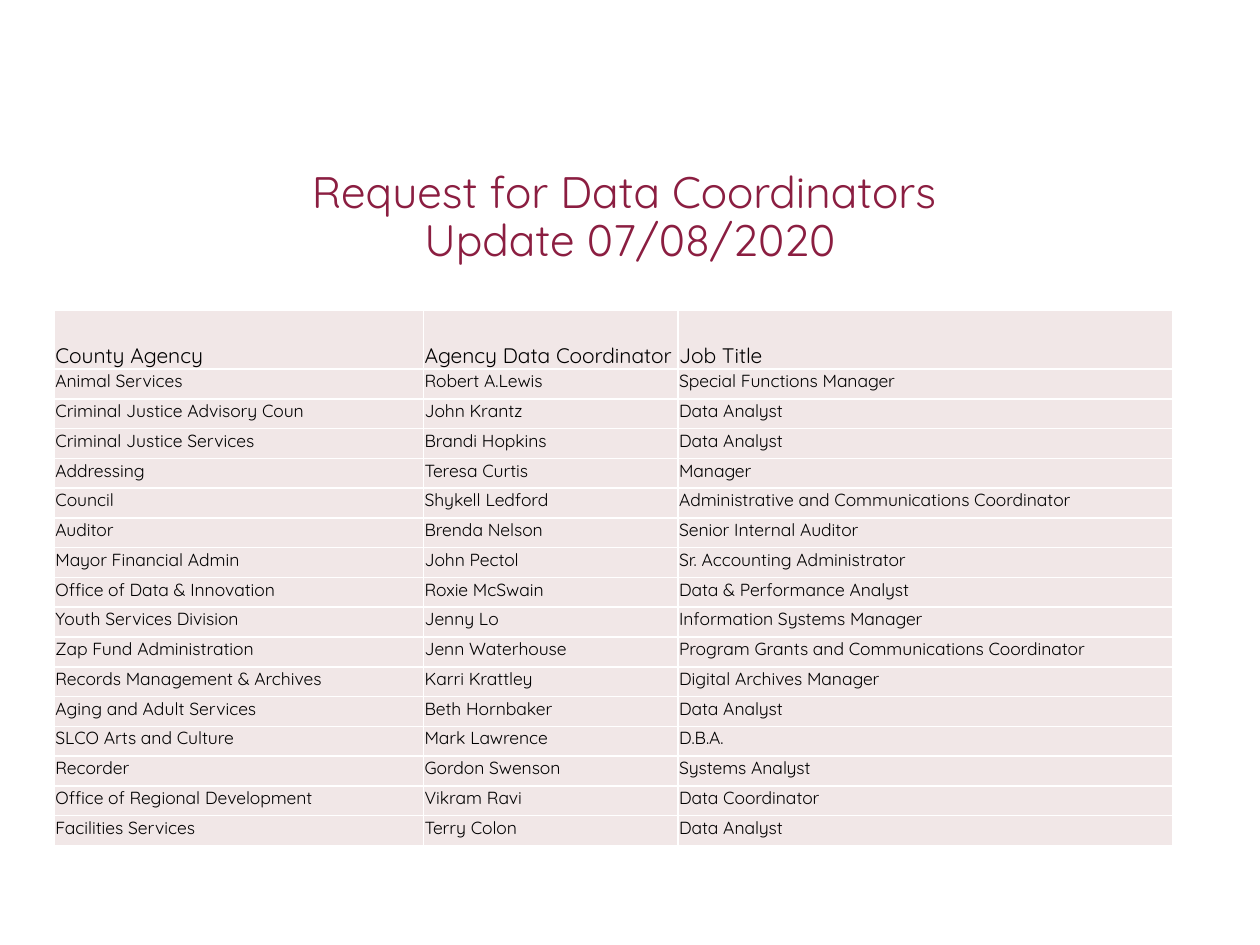
from lxml.etree import SubElement
from pptx import Presentation
from pptx.dml.color import RGBColor
from pptx.enum.text import MSO_ANCHOR, MSO_AUTO_SIZE, PP_ALIGN
from pptx.oxml.ns import qn
from pptx.util import Inches, Pt

FONT = "Quicksand"
MAROON = RGBColor(0x8B, 0x1E, 0x41)
BLACK = RGBColor(0, 0, 0)
WHITE = RGBColor(0xFF, 0xFF, 0xFF)
BLUSH = RGBColor(0xF1, 0xE7, 0xE7)

TITLE_LINES = ["Request for Data Coordinators ", "Update 07/08/2020"]
HEADER = ("County Agency", "Agency Data Coordinator", "Job Title")
COORDINATORS = [
    ("Animal Services", "Robert A.Lewis", "Special Functions Manager"),
    ("Criminal Justice Advisory Coun", "John Krantz", "Data Analyst"),
    ("Criminal Justice Services", "Brandi Hopkins", "Data Analyst"),
    ("Addressing", "Teresa Curtis", "Manager"),
    ("Council", "Shykell Ledford", "Administrative and Communications Coordinator"),
    ("Auditor", "Brenda Nelson", "Senior Internal Auditor"),
    ("Mayor Financial Admin", "John Pectol", "Sr. Accounting Administrator"),
    ("Office of Data & Innovation", "Roxie McSwain", "Data & Performance Analyst"),
    ("Youth Services Division", "Jenny Lo", "Information Systems Manager"),
    ("Zap Fund Administration", "Jenn Waterhouse", "Program Grants and Communications Coordinator"),
    ("Records Management & Archives", "Karri Krattley", "Digital Archives Manager"),
    ("Aging and Adult Services", "Beth Hornbaker", "Data Analyst"),
    ("SLCO Arts and Culture", "Mark Lawrence", "D.B.A."),
    ("Recorder", "Gordon Swenson", "Systems Analyst"),
    ("Office of Regional Development", "Vikram Ravi", "Data Coordinator"),
    ("Facilities Services", "Terry Colon", "Data Analyst"),
]
COLUMN_WIDTHS = (2.93, 2.02, 3.93)
HEADER_HEIGHT = Inches(0.47)


def add_run(p, text, size, color):
    """Append a run in the slide font to a paragraph."""
    r = p.add_run()
    r.text = text
    r.font.name = FONT
    r.font.size = Pt(size)
    r.font.color.rgb = color


def set_borders(cell, color, width):
    """Draw a solid line on all four sides of a cell."""
    tcPr = cell._tc.get_or_add_tcPr()
    for side in ("a:lnL", "a:lnR", "a:lnT", "a:lnB"):
        ln = SubElement(tcPr, qn(side), w=str(width))
        fill = SubElement(ln, qn("a:solidFill"))
        SubElement(fill, qn("a:srgbClr"), val=str(color))


def fill_cell(cell, text, size, anchor):
    """Format one table cell and write its text."""
    set_borders(cell, WHITE, Pt(1))
    cell.fill.solid()
    cell.fill.fore_color.rgb = BLUSH
    cell.margin_left = cell.margin_right = cell.margin_top = Inches(0.01)
    cell.margin_bottom = 0
    cell.vertical_anchor = anchor
    add_run(cell.text_frame.paragraphs[0], text, size, BLACK)


def place_title(s, left, top, width, height):
    """Place the two-line centred title in the given box."""
    sp = s.shapes.title
    sp.left, sp.top, sp.width, sp.height = left, top, width, height
    tf = sp.text_frame
    tf.word_wrap = True
    tf.auto_size = MSO_AUTO_SIZE.NONE
    tf.vertical_anchor = MSO_ANCHOR.MIDDLE
    for i, line in enumerate(TITLE_LINES):
        p = tf.add_paragraph() if i else tf.paragraphs[0]
        p.alignment = PP_ALIGN.CENTER
        p.line_spacing = 0.7
        p.space_before = Pt(0)
        p.space_after = Pt(6)
        add_run(p, line, 25.2, MAROON)


def place_table(s, left, top, width, height):
    """Place the coordinator table in the given box."""
    rows = [HEADER] + COORDINATORS
    table = s.shapes.add_table(len(rows), len(HEADER), left, top, width, height).table
    table.first_row = False
    table.horz_banding = False
    for column, column_width in zip(table.columns, COLUMN_WIDTHS):
        column.width = Inches(column_width)
    row_height = (height - HEADER_HEIGHT) // len(COORDINATORS)
    for i, texts in enumerate(rows):
        table.rows[i].height = row_height if i else HEADER_HEIGHT
        size = 10 if i else 12
        anchor = MSO_ANCHOR.TOP if i else MSO_ANCHOR.BOTTOM
        for cell, text in zip(table.rows[i].cells, texts):
            fill_cell(cell, text, size, anchor)


def main():
    """Build the slide and save the presentation."""
    prs = Presentation()
    prs.slide_width, prs.slide_height = Inches(10), Inches(7.5)
    s = prs.slides.add_slide(prs.slide_layouts[5])
    place_title(s, Inches(0.69), Inches(1.34), Inches(8.62), Inches(0.83))
    place_table(s, Inches(0.43), Inches(2.46), Inches(8.88), Inches(4.25))
    prs.save("out.pptx")


if __name__ == "__main__":
    main()
